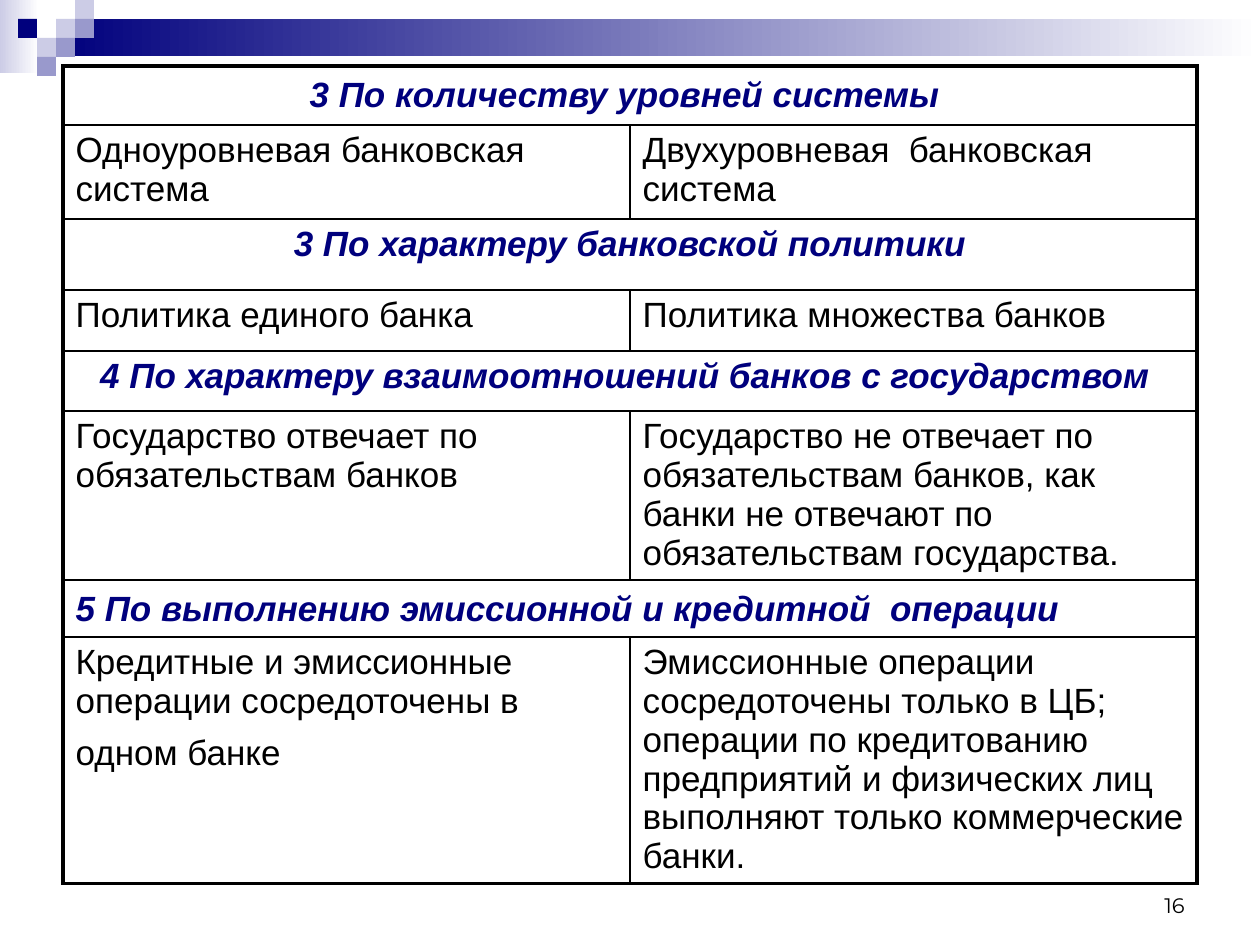
from lxml.etree import SubElement
from pptx import Presentation
from pptx.dml.color import RGBColor
from pptx.enum.shapes import MSO_SHAPE
from pptx.enum.text import MSO_ANCHOR, PP_ALIGN
from pptx.oxml import parse_xml
from pptx.oxml.ns import nsdecls, qn
from pptx.util import Emu, Pt

NAVY, LILAC, MID = "00007D", "CCCCE6", "9999CC"
BLACK, WHITE = "000000", "FFFFFF"


def px(n):
    return Emu(round(n * 914400 / 126))


def rgb(code):
    return RGBColor.from_string(code)


class Deck:
    font = "Arial"
    size = 20
    thick, thin = 2.25, 1
    # Line pitch by the largest text size of a cell
    pitch = {20: 22.2, 22: 25}

    def __init__(self, wide, high):
        self.prs = Presentation()
        self.prs.slide_width, self.prs.slide_height = px(wide), px(high)
        self.slide = self.prs.slides.add_slide(self.prs.slide_layouts[6])

    def rect(self, x, y, w, h, color, fade=None):
        box = self.slide.shapes.add_shape(
            MSO_SHAPE.RECTANGLE, px(x), px(y), px(w), px(h))
        box.shadow.inherit = False
        box.line.fill.background()
        if fade:
            box.fill.gradient()
            box.fill.gradient_angle = 0
            for stop, code in zip(box.fill.gradient_stops, (color, fade)):
                stop.color.rgb = rgb(code)
        else:
            box.fill.solid()
            box.fill.fore_color.rgb = rgb(color)

    def run(self, par, text, size=None, color=BLACK, font=None, strong=False):
        run = par.add_run()
        run.text = text
        run.font.name = font or self.font
        run.font.size = Pt(size or self.size)
        run.font.color.rgb = rgb(color)
        run.font.bold = run.font.italic = strong

    def label(self, x, y, w, h, text, size, font):
        frame = self.slide.shapes.add_textbox(
            px(x), px(y), px(w), px(h)).text_frame
        frame.word_wrap = True
        frame.vertical_anchor = MSO_ANCHOR.BOTTOM
        par = frame.paragraphs[0]
        par.alignment = PP_ALIGN.RIGHT
        self.run(par, text, size, font=font)

    def edges(self, cell, widths):
        props = cell._tc.get_or_add_tcPr()
        for i, (side, width) in enumerate(zip("LRTB", widths)):
            line = parse_xml(f'<a:ln{side} {nsdecls("a")} w="{Pt(width)}"/>')
            fill = SubElement(line, qn("a:solidFill"))
            SubElement(fill, qn("a:srgbClr"), val=BLACK)
            props.insert(i, line)

    def cell(self, cell, runs, align, head):
        par = cell.text_frame.paragraphs[0]
        par.alignment = align
        pitch = self.pitch.get(max(size for _, size in runs))
        if pitch:
            par.line_spacing = Pt(pitch)
        for text, size in runs:
            self.run(par, text, size, NAVY if head else BLACK, strong=head)

    def table(self, x, y, cols, rows):
        last = len(rows) - 1
        grid = self.slide.shapes.add_table(
            len(rows), len(cols), px(x), px(y), px(sum(cols)),
            px(sum(high for high, _, _ in rows))).table
        grid.first_row = grid.horz_banding = False
        for col, wide in zip(grid.columns, cols):
            col.width = px(wide)
        for r, (high, align, texts) in enumerate(rows):
            grid.rows[r].height = px(high)
            head = len(texts) == 1
            for c in range(len(cols)):
                cell = grid.cell(r, c)
                cell.fill.background()
                # A merged heading reaches the right edge of the table
                outer = (c == 0, head or c == len(cols) - 1,
                         r == 0, r == last)
                self.edges(cell, [self.thick if o else self.thin
                                  for o in outer])
            if head:
                grid.cell(r, 0).merge(grid.cell(r, len(cols) - 1))
            for c, runs in enumerate(texts):
                self.cell(grid.cell(r, c), runs, align, head)


def main():
    deck = Deck(1260, 945)

    # Fading bands along the top
    deck.rect(0, 0, 39, 73, LILAC, WHITE)
    deck.rect(57, 19, 1203, 37, NAVY, WHITE)

    # Mosaic of small squares
    step = 19
    for col, row, color in [(3, 1, LILAC), (4, 0, LILAC), (4, 1, MID),
                            (2, 2, LILAC), (1, 1, NAVY), (3, 2, MID),
                            (2, 3, MID)]:
        deck.rect(col * step - 1, row * step, step, step, color)

    # Slide number
    deck.label(903, 861, 294, 63, "16", 12, "Montserrat")

    # Comparison table: height, alignment, runs of each cell
    mid, left = PP_ALIGN.CENTER, PP_ALIGN.LEFT
    rows = [
        (59, mid, [[("3 По количеству уровней системы", 20), (" ", 22)]]),
        (94, left, [[("Одноуровневая банковская система", 20)],
                    [("Двухуровневая  банковская система", 20)]]),
        (71, mid, [[("3 По характеру банковской политики", 20)]]),
        (61, left, [[("Политика единого банка", 20)],
                    [("Политика множества банков", 20)]]),
        (60, mid, [[("4 По характеру взаимоотношений банков "
                     "с государством ", 20)]]),
        (169, left, [[("Государство отвечает по обязательствам банков", 20)],
                     [("Государство не отвечает по обязательствам банков, "
                       "как банки не отвечают по обязательствам "
                       "государства.", 20)]]),
        (57, left, [[("5 По выполнению эмиссионной и кредитной  операции",
                      20), (" ", 22)]]),
        (247, left, [[("Кредитные и эмиссионные операции сосредоточены "
                       "в одном банке", 20), (" ", 28)],
                     [("Эмиссионные операции сосредоточены только в ЦБ; "
                       "операции по кредитованию предприятий и физических "
                       "лиц выполняют только коммерческие банки.", 20)]]),
    ]
    deck.table(63, 66, [567, 567], rows)

    deck.prs.save("out.pptx")


if __name__ == "__main__":
    main()
